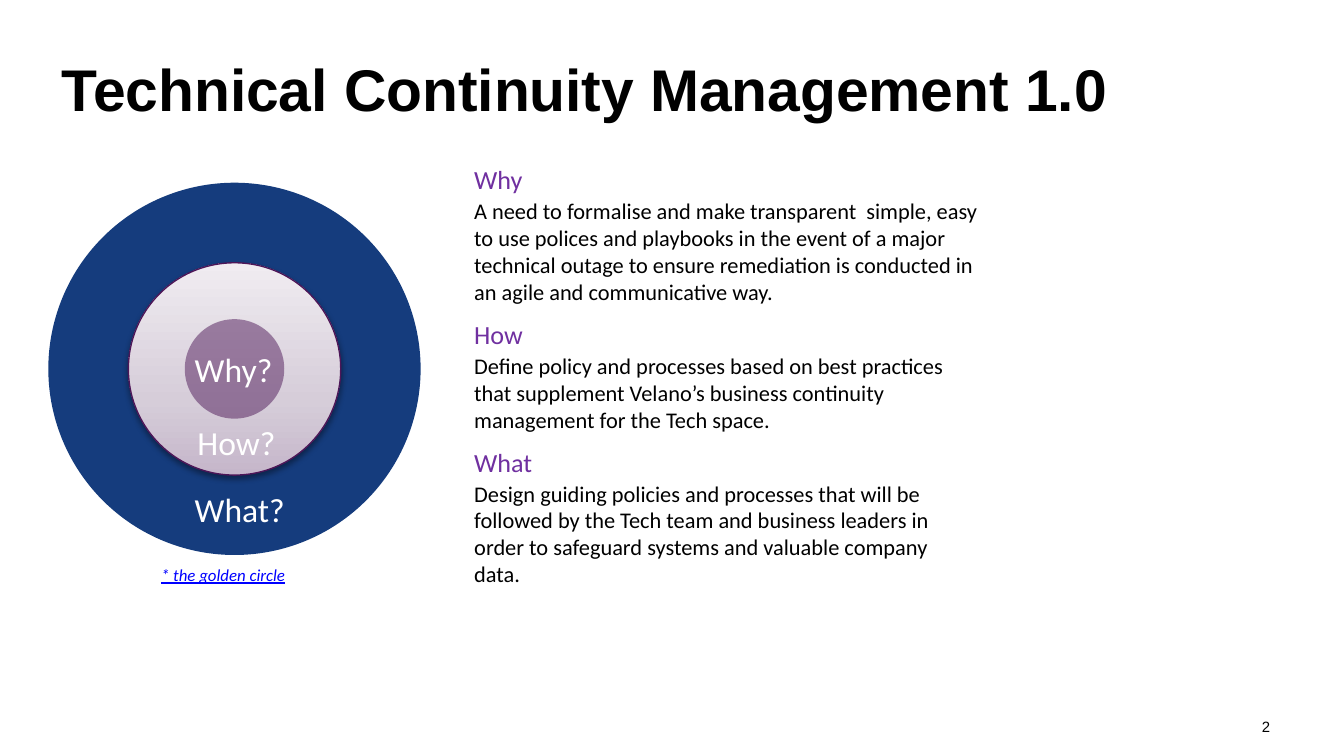
"""Builds the Technical Continuity Management slide with its golden circle."""
from lxml import etree
from pptx import Presentation, util as u
from pptx.dml.color import RGBColor
from pptx.enum import shapes, text
from pptx.oxml import parse_xml
from pptx.oxml.ns import nsdecls, qn

PX = 4572


def color(hex_string):
    return RGBColor.from_string(hex_string)


def write(box, words, size, hex_string, font="Calibri", wrap=False):
    box.text_frame.word_wrap = wrap
    para = box.text_frame.paragraphs[0]
    para.alignment = text.PP_ALIGN.LEFT
    span = para.add_run()
    span.text = words
    span.font.size = u.Pt(size)
    span.font.name = font
    span.font.color.rgb = color(hex_string)
    return span


deck = Presentation()
deck.slide_width, deck.slide_height = 2000 * PX, 1125 * PX
page = deck.slides.add_slide(deck.slide_layouts[5])

title = page.shapes.title
title.left, title.top, title.width, title.height = (n * PX for n in (92, 80, 1820, 104))
frame = title.text_frame
frame.margin_left = frame.margin_top = frame.margin_right = frame.margin_bottom = 0
frame.vertical_anchor = text.MSO_ANCHOR.BOTTOM
frame.auto_size = text.MSO_AUTO_SIZE.NONE
write(title, "Technical Continuity Management 1.0", 31.5, "000000", "Arial", True).font.bold = True

center_x, center_y = 349, 549
rings = []
for diameter, fill in [(554, "153C7D"), (316, "C5B6CA"), (148, "4E1858")]:
    radius = diameter // 2
    ring = page.shapes.add_shape(
        shapes.MSO_SHAPE.OVAL, (center_x - radius) * PX, (center_y - radius) * PX,
        diameter * PX, diameter * PX)
    ring.shadow.inherit = False
    ring.fill.solid()
    ring.fill.fore_color.rgb = color(fill)
    ring.line.fill.background()
    rings.append(ring)
what_ring, how_ring, why_ring = rings

how_ring.line.color.rgb = color("4D1658")
how_ring.line.width = u.Pt(0.75)
stops = "".join(
    f'<a:gs pos="{percent * 1000}"><a:srgbClr val="{shade}"/></a:gs>'
    for percent, shade in [(0, "C5B6CA"), (35, "D6CDD9"), (100, "F0ECF1")])
how_properties = how_ring._element.spPr
how_properties.replace(how_properties.find(qn("a:solidFill")), parse_xml(
    f'<a:gradFill {nsdecls("a")} rotWithShape="1"><a:gsLst>{stops}</a:gsLst>'
    '<a:lin ang="16200000" scaled="0"/></a:gradFill>'))
how_properties.find(qn("a:effectLst")).append(parse_xml(
    f'<a:outerShdw {nsdecls("a")} blurRad="40000" dist="20000" dir="5400000" rotWithShape="0">'
    '<a:srgbClr val="000000"><a:alpha val="38000"/></a:srgbClr></a:outerShdw>'))
why_color = why_ring._element.spPr.find(qn("a:solidFill"))[0]
etree.SubElement(why_color, qn("a:alpha")).set("val", "50000")

for words, left, top, width in [("Why?", 270, 510, 158), ("How?", 274, 618, 158), ("What?", 270, 718, 176)]:
    label = page.shapes.add_textbox(left * PX, top * PX, width * PX, 80 * PX)
    write(label, words, 18, "FFFFFF")

footnote = page.shapes.add_textbox(220 * PX, 830 * PX, 226 * PX, 50 * PX)
span = write(footnote, "* the golden circle", 9, "0000FF")
span.font.italic = span.font.underline = True

sections = [
    ("Why", 234, 114, 800, 262,
     "A need to formalise and make transparent  simple, easy to use polices and playbooks in the event "
     "of a major technical outage to ensure remediation is conducted in an agile and communicative way."),
    ("How", 464, 114, 800, 142,
     "Define policy and processes based on best practices that supplement Velano’s business continuity "
     "management for the Tech space."),
    ("What", 654, 128, 770, 182,
     "Design guiding policies and processes that will be followed by the Tech team and business leaders "
     "in order to safeguard systems and valuable company data."),
]
for heading, top, heading_width, width, height, body in sections:
    heading_box = page.shapes.add_textbox(686 * PX, top * PX, heading_width * PX, 68 * PX)
    write(heading_box, heading, 14, "7030A0")
    body_box = page.shapes.add_textbox(686 * PX, (top + 50) * PX, width * PX, height * PX)
    write(body_box, body, 12, "000000", wrap=True)

number_box = page.shapes.add_textbox(1726 * PX, 1052 * PX, 184 * PX, 60 * PX)
number_box.text_frame.vertical_anchor = text.MSO_ANCHOR.MIDDLE
write(number_box, "2", 8, "000000", "Arial", True)
number_box.text_frame.paragraphs[0].alignment = text.PP_ALIGN.RIGHT

deck.save("out.pptx")
